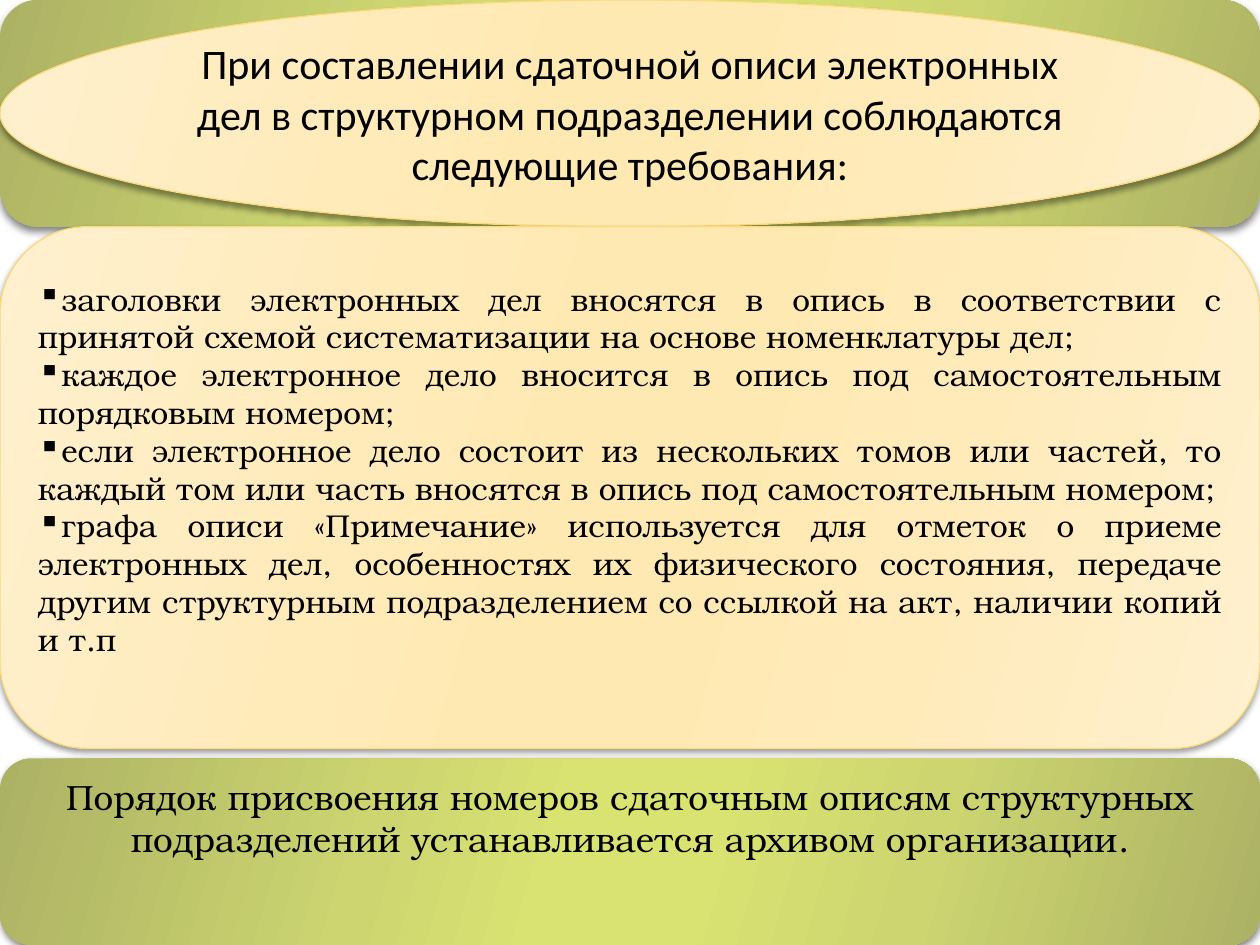
from lxml import etree
from pptx import Presentation
from pptx.dml.color import RGBColor
from pptx.enum.shapes import MSO_SHAPE
from pptx.enum.text import MSO_ANCHOR, PP_ALIGN
from pptx.oxml.ns import qn
from pptx.util import Inches, Pt

ROUNDED, ELLIPSE = MSO_SHAPE.ROUNDED_RECTANGLE, MSO_SHAPE.OVAL
MIDDLE = MSO_ANCHOR.MIDDLE
CENTER, JUSTIFY = PP_ALIGN.CENTER, PP_ALIGN.JUSTIFY

BLACK = RGBColor(0x00, 0x00, 0x00)
GOLD = RGBColor(0xFA, 0xDA, 0x7A)
# Each gradient runs from its edge colour to its middle colour and back
GREENS = (RGBColor(0xAC, 0xB2, 0x64), RGBColor(0xCC, 0xD5, 0x70), RGBColor(0xD9, 0xE3, 0x71))
CREAMS = (RGBColor(0xFF, 0xF0, 0xCF), RGBColor(0xFF, 0xEB, 0xBA), RGBColor(0xFF, 0xE9, 0xB3))
STOPS = (0, 30, 45, 55, 73, 100)

SANS, SERIF = "Calibri", "TeX Gyre Bonum"
WIDTH = 10

HEADING = ("При составлении сдаточной описи электронных дел в структурном "
           "подразделении соблюдаются следующие требования:")
REQUIREMENTS = [
    "заголовки электронных дел вносятся в опись в соответствии с принятой схемой "
    "систематизации на основе номенклатуры дел;",
    "каждое электронное дело вносится в опись под самостоятельным порядковым номером;",
    "если электронное дело состоит из нескольких томов или частей, то каждый том или "
    "часть вносятся в опись под самостоятельным номером;",
    "графа описи «Примечание» используется для отметок о приеме электронных дел, "
    "особенностях их физического состояния, передаче другим структурным подразделением "
    "со ссылкой на акт, наличии копий и т.п",
]
NUMBERING = ("Порядок присвоения номеров сдаточным описям структурных подразделений "
             "устанавливается архивом организации.")


class SlideBuilder:
    def __init__(self, slide):
        self.slide = slide

    def panel(self, kind, top, height, colors, outline=None):
        """Full-width shape with a mirrored gradient and a soft shadow."""
        panel = self.slide.shapes.add_shape(
            kind, 0, Inches(top), Inches(WIDTH), Inches(height))
        self.gradient(panel, colors + colors[::-1])
        if outline is None:
            panel.line.fill.background()
        else:
            panel.line.color.rgb = outline
            panel.line.width = Pt(0.75)
        # Outlined panels have the lighter shadow
        self.soft_shadow(panel, *((50, 4) if outline is None else (40, 3)))
        return panel

    def gradient(self, panel, colors):
        panel.fill.gradient()
        panel.fill.gradient_angle = 360 - 16
        stops = panel._element.spPr.find(qn("a:gradFill")).find(qn("a:gsLst"))
        for stop in list(stops):
            stops.remove(stop)
        for position, color in zip(STOPS, colors):
            stop = etree.SubElement(stops, qn("a:gs"), pos=str(position * 1000))
            etree.SubElement(stop, qn("a:srgbClr"), val=str(color))

    def soft_shadow(self, panel, opacity, blur):
        panel.shadow.inherit = False
        effects = panel._element.spPr.find(qn("a:effectLst"))
        outer = etree.SubElement(effects, qn("a:outerShdw"), blurRad=str(Pt(blur)),
                                 dist=str(Pt(2)), dir="5400000", rotWithShape="0")
        color = etree.SubElement(outer, qn("a:srgbClr"), val=str(BLACK))
        etree.SubElement(color, qn("a:alpha"), val=str(opacity * 1000))

    def label(self, panel, lines, size, font, align=CENTER, bullet=None, bottom=0.05):
        frame = panel.text_frame
        frame.word_wrap = True
        frame.vertical_anchor = MIDDLE
        frame.margin_bottom = Inches(bottom)
        frame.text = "\n".join(lines)
        for paragraph in frame.paragraphs:
            paragraph.alignment = align
            for run in paragraph.runs:
                run.font.size = Pt(size)
                run.font.name = font
                run.font.color.rgb = BLACK
            if bullet:
                properties = paragraph._p.get_or_add_pPr()
                etree.SubElement(properties, qn("a:buChar"), char=bullet)


def main():
    deck = Presentation()
    deck.slide_width, deck.slide_height = Inches(WIDTH), Inches(7.5)
    builder = SlideBuilder(deck.slides.add_slide(deck.slide_layouts[6]))

    # Heading: ellipse on a green band
    builder.panel(ROUNDED, 0, 1.8, GREENS)
    heading = builder.panel(ELLIPSE, 0, 1.8, CREAMS, GOLD)
    builder.label(heading, [HEADING], 24, SANS)

    # Requirements, set slightly above the middle
    requirements = builder.panel(ROUNDED, 1.8, 4.14, CREAMS, GOLD)
    builder.label(requirements, REQUIREMENTS, 18, SERIF, JUSTIFY, "▪", bottom=0.35)

    # Numbering rule in the upper part of the bottom band
    numbering = builder.panel(ROUNDED, 6.02, 1.48, GREENS)
    builder.label(numbering, [NUMBERING], 20, SERIF, bottom=0.59)

    deck.save("out.pptx")


if __name__ == "__main__":
    main()
